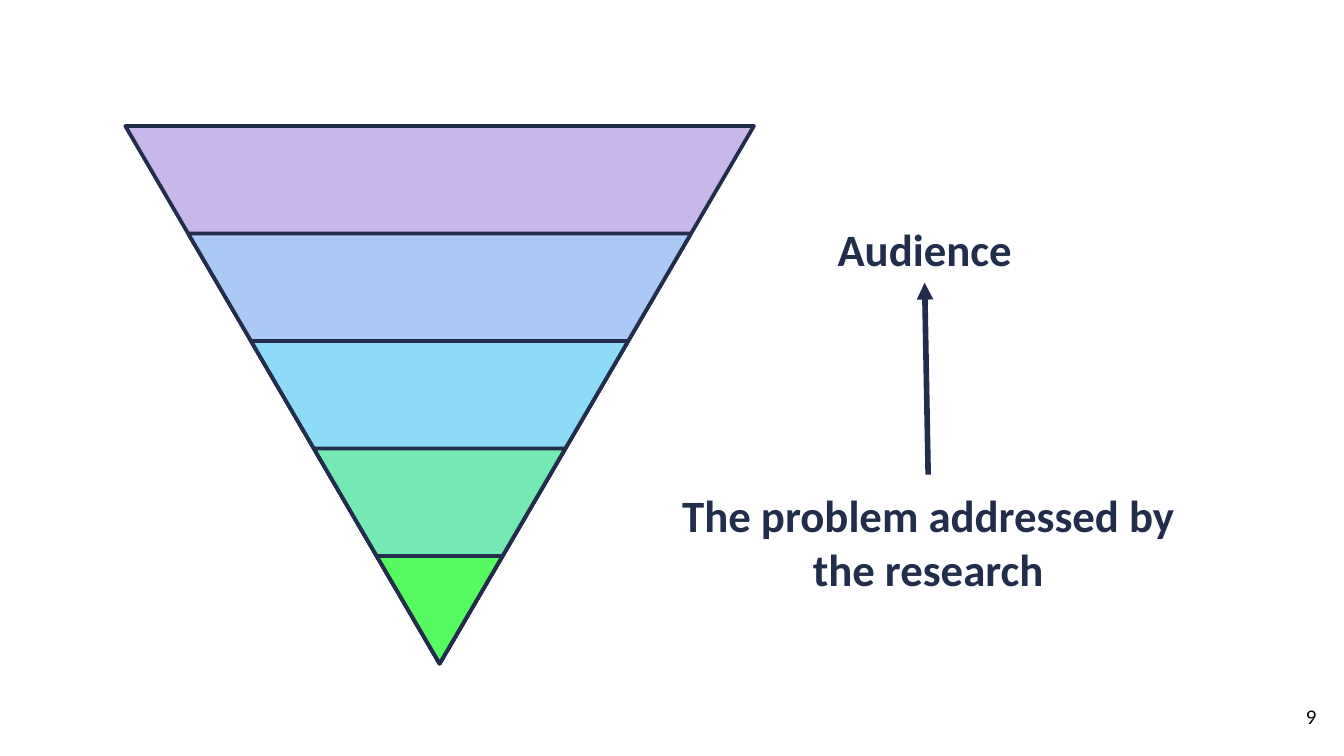
from lxml.etree import SubElement
from pptx import Presentation
from pptx.dml.color import RGBColor
from pptx.enum.shapes import MSO_CONNECTOR, MSO_SHAPE
from pptx.enum.text import MSO_ANCHOR as Anchor, PP_ALIGN as Align
from pptx.oxml.ns import qn
from pptx.util import Pt

PX = 9525  # EMU per px, 96 px to the inch
INSET = Pt(7.2)

NAVY = RGBColor(0x21, 0x2D, 0x4A)
BLACK = RGBColor(0x00, 0x00, 0x00)
LAYER_COLORS = [  # widest layer first
    RGBColor(0xC8, 0xB7, 0xEB),
    RGBColor(0xAB, 0xC9, 0xF5),
    RGBColor(0x8D, 0xDB, 0xF6),
    RGBColor(0x74, 0xE9, 0xB4),
    RGBColor(0x56, 0xFB, 0x61),
]


def px(*lengths):
    """Turn px lengths into EMU."""
    return [round(length * PX) for length in lengths]


def write_text(shape, text, size=24, font="Calibri", color=NAVY, bold=True,
               align=Align.CENTER, anchor=Anchor.TOP):
    frame = shape.text_frame
    frame.word_wrap = True
    frame.vertical_anchor = anchor
    frame.margin_left = frame.margin_right = INSET
    frame.margin_top = frame.margin_bottom = INSET
    paragraph = frame.paragraphs[0]
    paragraph.alignment = align
    run = paragraph.add_run()
    run.text = text
    run.font.size = Pt(size)
    run.font.name = font
    run.font.bold = bold
    run.font.color.rgb = color


presentation = Presentation()
presentation.slide_width, presentation.slide_height = px(960, 540)
slide = presentation.slides.add_slide(presentation.slide_layouts[5])

# Audience, the problem, and the arrow between them
title = slide.shapes.title
title.left, title.top, title.width, title.height = px(519, 149, 283, 53)
write_text(title, "Audience")

problem = slide.shapes.add_textbox(*px(463, 339, 400, 93))
write_text(problem, "The problem addressed by the research")

arrow = slide.shapes.add_connector(MSO_CONNECTOR.STRAIGHT, 0, 0, 0, 0)
arrow.begin_connect(problem, 0)
arrow.end_connect(title, 2)
arrow.line.color.rgb = NAVY
arrow.line.width = Pt(3)
SubElement(arrow.line._get_or_add_ln(), qn("a:tailEnd"), type="triangle")
SubElement(arrow._element.spPr, qn("a:effectLst"))

# Inverted pyramid: nested triangles that share one tip
CENTER, TIP, WIDTH, HEIGHT = 314, 474, 449, 384
pyramid = slide.shapes.add_group_shape()
for index, color in enumerate(LAYER_COLORS):
    share = 1 - index / len(LAYER_COLORS)
    width, height = WIDTH * share, HEIGHT * share
    layer = pyramid.shapes.add_shape(
        MSO_SHAPE.ISOSCELES_TRIANGLE,
        *px(CENTER - width / 2, TIP - height, width, height))
    layer.rotation = 180
    layer.shadow.inherit = False
    layer.fill.solid()
    layer.fill.fore_color.rgb = color
    layer.line.color.rgb = NAVY
    layer.line.width = Pt(2)

slide_number = slide.shapes.add_textbox(*px(892, 492, 58, 41))
write_text(slide_number, "9", size=10, font="Lato", color=BLACK, bold=False,
           align=Align.RIGHT, anchor=Anchor.MIDDLE)

presentation.save("out.pptx")
